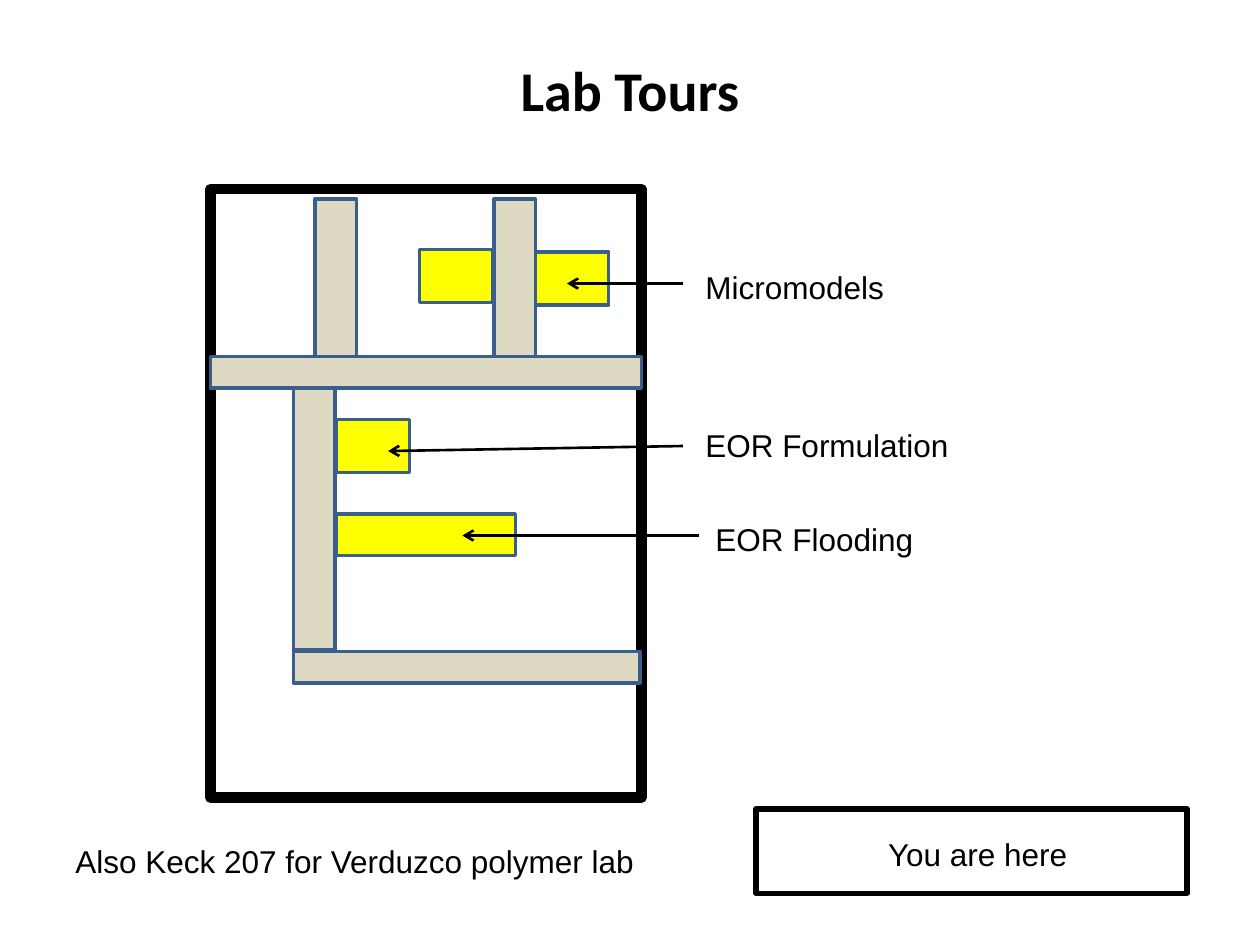
from pptx import Presentation
from pptx.dml.color import RGBColor
from pptx.enum.shapes import MSO_CONNECTOR, MSO_SHAPE
from pptx.enum.text import MSO_ANCHOR, MSO_AUTO_SIZE, PP_ALIGN
from pptx.oxml.ns import qn
from pptx.util import Inches, Pt
from lxml.etree import SubElement


def rgb(value):
    return RGBColor.from_string(value)


def add_box(box, fill, line, width):
    sp = s.shapes.add_shape(MSO_SHAPE.RECTANGLE, *map(Inches, box))
    sp.shadow.inherit = False
    if fill:
        sp.fill.solid()
        sp.fill.fore_color.rgb = rgb(fill)
    else:
        sp.fill.background()
    sp.line.color.rgb = rgb(line)
    sp.line.width = Pt(width)


BLACK, BLUE, BEIGE, YELLOW = "000000", "3A5F8C", "DDD9C3", "FFFF00"

prs = Presentation()
prs.slide_width, prs.slide_height = Inches(10), Inches(7.5)
s = prs.slides.add_slide(prs.slide_layouts[5])

# Title
title = s.shapes.title
title.left, title.top, title.width, title.height = map(Inches, (0.5, 0.08, 9, 1.25))
tf = title.text_frame
tf.text = "Lab Tours"
tf.vertical_anchor = MSO_ANCHOR.MIDDLE
p = tf.paragraphs[0]
p.alignment = PP_ALIGN.CENTER
p.font.name, p.font.size, p.font.bold = "Calibri", Pt(32), True
p.font.color.rgb = rgb(BLACK)

# Building outline and "you are here" frame
add_box((1.67, 1.5, 3.42, 4.83), None, BLACK, 6)
add_box((6, 6.42, 3.42, 0.67), None, BLACK, 3)

# Labs, with the corridors over them
labs = [
    (2.67, 4.08, 1.42, 0.33),
    (2.67, 3.33, 0.58, 0.42),
    (4.25, 2, 0.58, 0.42),
    (3.33, 1.98, 0.58, 0.42),
]
corridors = [
    (2.33, 5.17, 2.75, 0.25),
    (1.67, 2.83, 3.42, 0.25),
    (2.33, 3.08, 0.33, 2.08),
    (2.5, 1.58, 0.33, 1.25),
    (3.92, 1.58, 0.33, 1.25),
]
for fill, boxes in ((BEIGE, corridors), (YELLOW, labs)):
    for box in boxes:
        add_box(box, fill, BLUE, 2)

# Labels
labels = [
    ("Micromodels", (5.5, 2.08, 1.75, 0.42), True),
    ("EOR Formulation", (5.5, 3.33, 2.17, 0.42), True),
    ("EOR Flooding", (5.58, 4.08, 1.83, 0.4), True),
    ("You are here", (6.95, 6.58, 1.64, 0.4), False),
    ("Also Keck 207 for Verduzco polymer lab", (0.5, 6.63, 4.67, 0.4), True),
]
for text, box, wrap in labels:
    tf = s.shapes.add_textbox(*map(Inches, box)).text_frame
    tf.text = text
    tf.word_wrap = wrap
    tf.auto_size = MSO_AUTO_SIZE.SHAPE_TO_FIT_TEXT
    p = tf.paragraphs[0]
    p.font.name, p.font.size = "Arial", Pt(18)
    p.font.color.rgb = rgb(BLACK)

# Arrows from labels to labs
arrows = [
    (5.42, 2.25, 4.5, 2.25),
    (5.42, 3.54, 3.08, 3.58),
    (5.55, 4.25, 3.67, 4.25),
]
for ends in arrows:
    arrow = s.shapes.add_connector(MSO_CONNECTOR.STRAIGHT, *map(Inches, ends))
    arrow.line.color.rgb = rgb(BLACK)
    arrow.line.width = Pt(1.5)
    SubElement(arrow.line._get_or_add_ln(), qn("a:tailEnd"), type="arrow")
    SubElement(arrow._element.spPr, qn("a:effectLst"))

prs.save("out.pptx")
